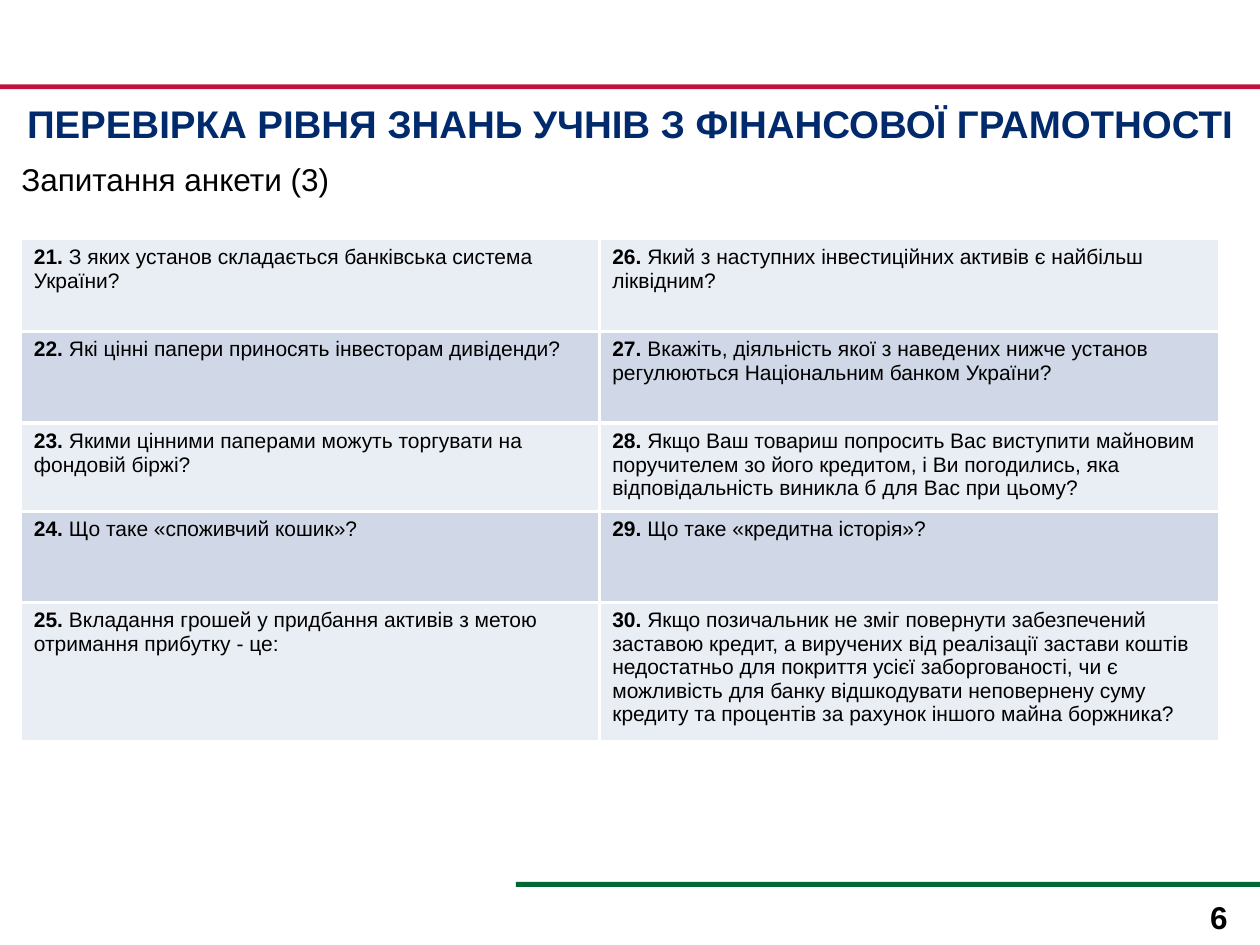
from lxml.etree import SubElement
from pptx import Presentation
from pptx.dml.color import RGBColor
from pptx.enum.shapes import MSO_SHAPE
from pptx.enum.text import PP_ALIGN
from pptx.oxml.ns import qn
from pptx.util import Cm, Pt

HUES = {
    "red": "C2113A", "green": "006633", "navy": "002A6C", "black": "000000",
    "white": "FFFFFF", "pale": "E9EDF4", "blue": "D0D8E8",
}
WIDE, HIGH = 25.4, 19.05
BAR = 0.1

FIRST = 21
LEFT = [
    "З яких установ складається банківська система України?",
    "Які цінні папери приносять інвесторам дивіденди?",
    "Якими цінними паперами можуть торгувати на фондовій біржі?",
    "Що таке «споживчий кошик»?",
    "Вкладання грошей у придбання активів з метою отримання прибутку - це:",
]
RIGHT = [
    "Який з наступних інвестиційних активів є найбільш ліквідним?",
    "Вкажіть, діяльність якої з наведених нижче установ регулюються "
    "Національним банком України?",
    "Якщо Ваш товариш попросить Вас виступити майновим поручителем зо його "
    "кредитом, і Ви погодились, яка відповідальність виникла б для Вас при цьому?",
    "Що таке «кредитна історія»?",
    "Якщо позичальник не зміг повернути забезпечений заставою кредит, "
    "а виручених від реалізації застави коштів недостатньо для покриття усієї "
    "заборгованості, чи є можливість для банку відшкодувати неповернену суму "
    "кредиту та процентів за рахунок іншого майна боржника?",
]


def color(name):
    return RGBColor.from_string(HUES[name])


def write(para, text, size=12, hue="black", bold=False, align=PP_ALIGN.LEFT):
    """Add one formatted run to a paragraph."""
    para.alignment = align
    run = para.add_run()
    run.text = text
    font = run.font
    font.name, font.size, font.bold = "Arial", Pt(size), bold
    font.color.rgb = color(hue)


def label(slide, box, text, **style):
    frame = slide.shapes.add_textbox(*map(Cm, box)).text_frame
    frame.word_wrap = True
    write(frame.paragraphs[0], text, **style)


def rule(slide, box, hue):
    bar = slide.shapes.add_shape(MSO_SHAPE.RECTANGLE, *map(Cm, box))
    bar.shadow.inherit = False
    bar.fill.solid()
    bar.fill.fore_color.rgb = color(hue)
    bar.line.fill.background()


def edge(cell, sides):
    """Draw white cell borders; sides maps a tag to a width in points."""
    props = cell._tc.get_or_add_tcPr()
    for spot, (tag, width) in enumerate(sides.items()):
        line = props.makeelement(qn(f"a:{tag}"), {"w": str(Pt(width))})
        fill = SubElement(line, qn("a:solidFill"))
        SubElement(fill, qn("a:srgbClr"), val=HUES["white"])
        props.insert(spot, line)


def header(slide, box):
    left, top, width, height = box
    rule(slide, (left, top, width, BAR), "red")
    label(slide, (left, top + 0.2, width, 1.47),
          "ПЕРЕВІРКА РІВНЯ ЗНАНЬ УЧНІВ З ФІНАНСОВОЇ ГРАМОТНОСТІ",
          size=22, hue="navy", bold=True, align=PP_ALIGN.CENTER)
    label(slide, (left + 0.18, top + 1.4, 20.65, 1.02),
          "Запитання анкети (3)", size=18)


def survey(slide, box):
    left, top, width, height = box
    count = len(LEFT)
    grid = slide.shapes.add_table(count, 2, *map(Cm, box)).table
    grid.first_row = False

    # Column widths; the last row takes the height that is left
    wide = 11.66
    for col, size in zip(grid.columns, (wide, width - wide)):
        col.width = Cm(size)
    tall = [1.85, 1.85, 1.78, 1.83]
    for row, size in zip(grid.rows, tall + [height - sum(tall)]):
        row.height = Cm(size)

    # Questions run down each column, with thin outer and thick inner lines
    for r, pair in enumerate(zip(LEFT, RIGHT)):
        for c, text in enumerate(pair):
            cell = grid.cell(r, c)
            cell.fill.solid()
            cell.fill.fore_color.rgb = color("blue" if r % 2 else "pale")
            edge(cell, {
                "lnL": 2.25 if c else 1,
                "lnR": 1 if c else 2.25,
                "lnT": 2.25 if r else 1,
                "lnB": 2.25 if r < count - 1 else 1,
            })
            para = cell.text_frame.paragraphs[0]
            write(para, f"{FIRST + c * count + r}. ", bold=True)
            write(para, text)


def footer(slide, box):
    left, top, width, height = box
    rule(slide, (left, top, width, BAR), "green")
    label(slide, (left + width - 1.7, top + 0.2, 1.3, 0.84), "6",
          size=18, bold=True, align=PP_ALIGN.RIGHT)


def main():
    deck = Presentation()
    deck.slide_width, deck.slide_height = Cm(WIDE), Cm(HIGH)
    slide = deck.slides.add_slide(deck.slide_layouts[6])
    header(slide, (0, 1.7, WIDE, 2.42))
    survey(slide, (0.43, 4.83, 24.13, 10.11))
    footer(slide, (10.4, 17.78, WIDE - 10.4, 1.27))
    deck.save("out.pptx")


if __name__ == "__main__":
    main()
